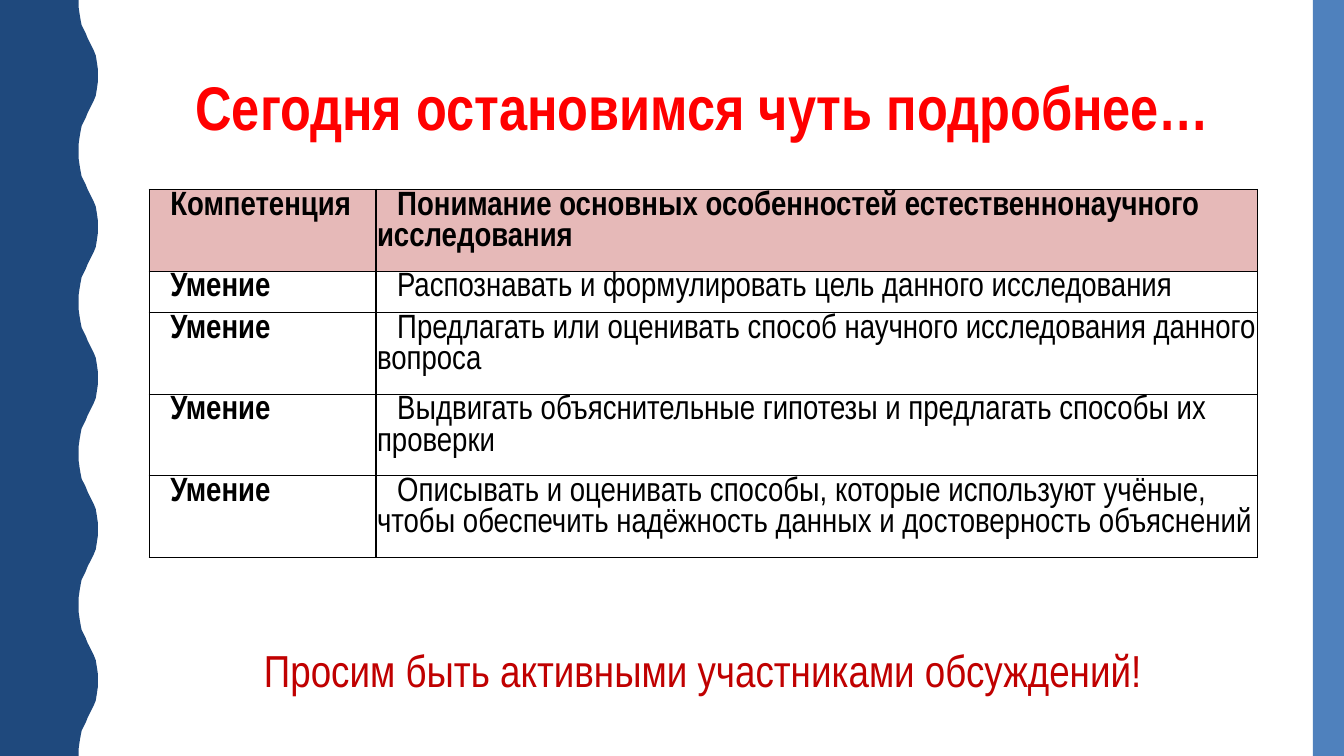
"""Builds a slide with a table of research skills between a wavy and a straight side band."""
from lxml.etree import SubElement
from pptx import Presentation
from pptx.dml.color import RGBColor
from pptx.enum.shapes import MSO_SHAPE
from pptx.enum.text import MSO_ANCHOR, PP_ALIGN
from pptx.oxml.ns import qn
from pptx.util import Inches, Pt

TITLE = "Сегодня остановимся чуть подробнее…"
SKILLS = [
    ("Компетенция", "Понимание основных особенностей естественнонаучного исследования"),
    ("Умение", "Распознавать и формулировать цель данного исследования"),
    ("Умение", "Предлагать или оценивать способ научного исследования данного вопроса"),
    ("Умение", "Выдвигать объяснительные гипотезы и предлагать способы их проверки"),
    ("Умение", "Описывать и оценивать способы, которые используют учёные, "
               "чтобы обеспечить надёжность данных и достоверность объяснений"),
]
APPEAL = "Просим быть активными участниками обсуждений!"

THEME = {
    "font": "Arial Narrow", "title_size": 44, "table_size": 24, "appeal_size": 32,
    "title": "FF0000", "appeal": "C00000", "ink": "000000",
    "wave": "1F497D", "band": "4F81BD", "header": "E6B9B8", "body": "FFFFFF",
}
SLIDE_WIDTH, SLIDE_HEIGHT = 13.33, 7.5
LEFT, WIDTH = 1.48, 10.99
TABLE_TOP = 1.88
COLUMNS = (2.25, 8.74)
ROWS = (0.81, 0.41, 0.8, 0.8, 0.8)
BAND_WIDTH = 0.31
HALF_WAVE = 0.75
CREST_CURVE = [
    (0.78, 0), (0.78, 0.07), (0.79, 0.14), (0.8, 0.2), (0.81, 0.25), (0.83, 0.29),
    (0.85, 0.33), (0.87, 0.38), (0.89, 0.42), (0.91, 0.46), (0.93, 0.5),
    (0.95, 0.55), (0.96, 0.61), (0.97, 0.68),
]


def color(name):
    return RGBColor.from_string(THEME[name])


def write(frame, text, *, size, ink, bold=False, align=PP_ALIGN.LEFT, indent=0):
    frame.word_wrap = True
    paragraph = frame.paragraphs[0]
    paragraph.alignment = align
    if indent:
        properties = paragraph._p.get_or_add_pPr()
        properties.set("marL", "0")
        properties.set("indent", str(Inches(indent)))
    run = paragraph.add_run()
    run.text = text
    run.font.name = THEME["font"]
    run.font.size = Pt(THEME[size])
    run.font.bold = bold
    run.font.color.rgb = color(ink)


def paint(shape, fill):
    shape.shadow.inherit = False
    shape.fill.solid()
    shape.fill.fore_color.rgb = color(fill)
    shape.line.fill.background()


def border(cell):
    properties = cell._tc.get_or_add_tcPr()
    for position, side in enumerate(("a:lnL", "a:lnR", "a:lnT", "a:lnB")):
        edge = properties.makeelement(qn(side), {"w": str(Pt(1))})
        properties.insert(position, edge)
        solid = SubElement(edge, qn("a:solidFill"))
        SubElement(solid, qn("a:srgbClr"), val=THEME["ink"])


def wave_points():
    falling = [(x, 2 * HALF_WAVE - y) for x, y in reversed(CREST_CURVE[1:])]
    period = CREST_CURVE + [(0.97, HALF_WAVE)] + falling
    waves = round(SLIDE_HEIGHT / (2 * HALF_WAVE))
    edge = [(x, y + 2 * HALF_WAVE * wave) for wave in range(waves) for x, y in period]
    corners = [(0.78, SLIDE_HEIGHT), (0, SLIDE_HEIGHT)]
    return [(Inches(x), Inches(y)) for x, y in edge + corners]


def add_bands(slide):
    outline = slide.shapes.build_freeform(0, 0)
    outline.add_line_segments(wave_points(), close=True)
    paint(outline.convert_to_shape(), "wave")
    band = slide.shapes.add_shape(
        MSO_SHAPE.RECTANGLE, Inches(SLIDE_WIDTH - BAND_WIDTH), 0,
        Inches(BAND_WIDTH), Inches(SLIDE_HEIGHT))
    paint(band, "band")


def add_line(slide, text, top, height, **style):
    box = slide.shapes.add_textbox(Inches(LEFT), Inches(top), Inches(WIDTH), Inches(height))
    write(box.text_frame, text, align=PP_ALIGN.CENTER, **style)


def add_skills(slide):
    table = slide.shapes.add_table(
        len(SKILLS), len(COLUMNS), Inches(LEFT), Inches(TABLE_TOP),
        Inches(WIDTH), Inches(sum(ROWS))).table
    for column, width in zip(table.columns, COLUMNS):
        column.width = Inches(width)
    for row, height in zip(table.rows, ROWS):
        row.height = Inches(height)
    for r, skill in enumerate(SKILLS):
        for c, text in enumerate(skill):
            cell = table.cell(r, c)
            cell.margin_left = cell.margin_top = Inches(0.01)
            cell.margin_right = cell.margin_bottom = 0
            cell.vertical_anchor = MSO_ANCHOR.TOP
            cell.fill.solid()
            cell.fill.fore_color.rgb = color("body" if r else "header")
            border(cell)
            write(cell.text_frame, text, size="table_size", ink="ink",
                  bold=r == 0 or c == 0, indent=0.2)


def main():
    deck = Presentation()
    deck.slide_width, deck.slide_height = Inches(SLIDE_WIDTH), Inches(SLIDE_HEIGHT)
    slide = deck.slides.add_slide(deck.slide_layouts[6])
    add_bands(slide)
    add_line(slide, TITLE, 0.63, 0.84, size="title_size", ink="title", bold=True)
    add_skills(slide)
    add_line(slide, APPEAL, 6.33, 0.64, size="appeal_size", ink="appeal")
    deck.save("out.pptx")


if __name__ == "__main__":
    main()
